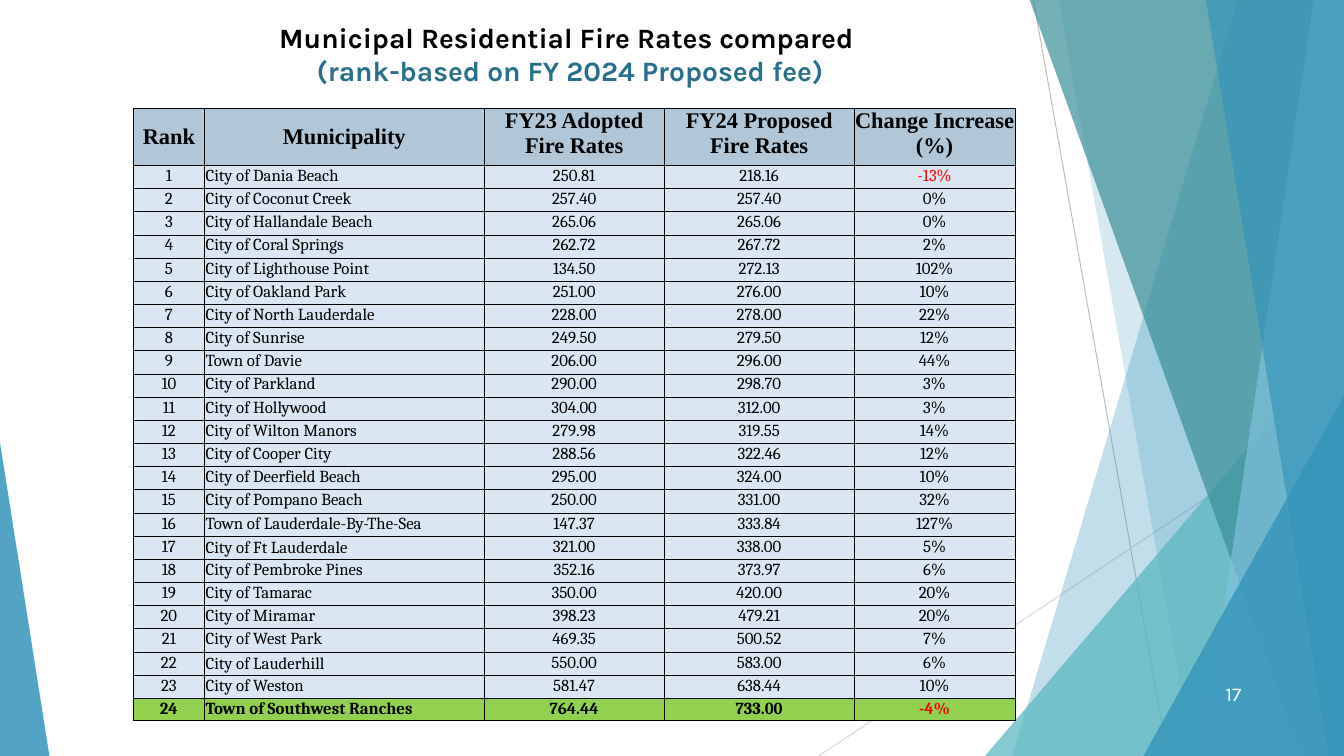
from copy import deepcopy
from dataclasses import dataclass

from lxml.etree import SubElement
from pptx import Presentation
from pptx.dml.color import RGBColor
from pptx.dml.fill import FillFormat
from pptx.enum.shapes import MSO_CONNECTOR, MSO_SHAPE
from pptx.enum.text import MSO_ANCHOR, MSO_AUTO_SIZE, PP_ALIGN
from pptx.oxml import parse_xml
from pptx.oxml.ns import nsdecls, qn
from pptx.shapes.autoshape import Shape
from pptx.slide import Slide
from pptx.table import _Cell
from pptx.text.text import _Paragraph
from pptx.util import Inches, Pt

WIDTH, HEIGHT = 13.33, 7.5
BLACK, WHITE, RED = "000000", "FFFFFF", "FF0000"
BLUE, TEAL = "3494BA", "276F8B"
HEADER_FILL, BODY_FILL, HOME_TOWN_FILL = "B1C6D7", "DAE6F1", "92D050"

TITLE_FONT = {"name": "Karla", "size": Pt(20), "bold": True}
NUMBER_FONT = {"name": "Karla", "size": Pt(14), "bold": False}
HEADER_FONT = {"name": "Times New Roman", "size": Pt(16), "bold": True}
BODY_FONT = {"name": "Cambria", "size": Pt(12), "bold": False}
CELL_MARGINS = {
    "margin_left": Inches(0.01),
    "margin_top": Inches(0.01),
    "margin_right": Inches(0.01),
    "margin_bottom": Inches(0),
}


@dataclass
class Ray:
    start: tuple[float, float]
    end: tuple[float, float]
    color: str


@dataclass
class Facet:
    corners: list[tuple[float, float]]
    color: str
    opacity: int


@dataclass
class Wedge:
    box: tuple[float, float, float, float]
    apex: float
    color: str
    opacity: int


@dataclass
class City:
    name: str
    adopted: str
    proposed: str
    change: str
    anchor: MSO_ANCHOR = MSO_ANCHOR.TOP


RAYS = [
    Ray((10.25, 0), (11.58, HEIGHT), "BFBFBF"),
    Ray((WIDTH, 4.03), (8.12, HEIGHT), "D9D9D9"),
]


def edge_facet(top: float, bottom: float, color: str, opacity: int) -> Facet:
    corners = [(top, -0.01), (WIDTH, -0.01), (WIDTH, HEIGHT), (bottom, HEIGHT)]
    return Facet(corners, color, opacity)


PANES = [
    edge_facet(12.28, 10.04, BLUE, 30),
    edge_facet(10.5, 11.83, BLUE, 20),
    Wedge((9.77, 3.33, 3.56, 4.17), 1, "58B6C0", 72),
    edge_facet(10.21, 12.91, "3A8F98", 70),
    edge_facet(13.03, 11.92, "7FC1DB", 70),
    edge_facet(11.96, 13.18, BLUE, 65),
    Wedge((11.34, 3.93, 1.99, 3.57), 1, BLUE, 80),
    Wedge((0, 4.39, 0.49, 3.11), 0, BLUE, 85),
]

COLUMN_WIDTHS = [0.71, 2.77, 1.79, 1.88, 1.6]
ROW_HEIGHT = 0.23
HEADINGS = [
    ("Rank", MSO_ANCHOR.MIDDLE),
    ("Municipality", MSO_ANCHOR.MIDDLE),
    ("FY23 Adopted\nFire Rates", MSO_ANCHOR.TOP),
    ("FY24 Proposed\nFire Rates", MSO_ANCHOR.TOP),
    ("Change Increase (%)", MSO_ANCHOR.TOP),
]
CITIES = [
    City("City of Dania Beach", "250.81", "218.16", "-13%"),
    City("City of Coconut Creek", "257.40", "257.40", "0%"),
    City("City of Hallandale Beach", "265.06", "265.06", "0%"),
    City("City of Coral Springs", "262.72", "267.72", "2%"),
    City("City of Lighthouse Point", "134.50", "272.13", "102%"),
    City("City of Oakland Park", "251.00", "276.00", "10%"),
    City("City of North Lauderdale", "228.00", "278.00", "22%"),
    City("City of Sunrise", "249.50", "279.50", "12%"),
    City("Town of Davie", "206.00", "296.00", "44%"),
    City("City of Parkland", "290.00", "298.70", "3%"),
    City("City of Hollywood", "304.00", "312.00", "3%"),
    City("City of Wilton Manors", "279.98", "319.55", "14%"),
    City("City of Cooper City", "288.56", "322.46", "12%"),
    City("City of Deerfield Beach", "295.00", "324.00", "10%"),
    City("City of Pompano Beach", "250.00", "331.00", "32%"),
    City("Town of Lauderdale-By-The-Sea", "147.37", "333.84", "127%"),
    City("City of Ft Lauderdale", "321.00", "338.00", "5%", MSO_ANCHOR.MIDDLE),
    City("City of Pembroke Pines", "352.16", "373.97", "6%"),
    City("City of Tamarac", "350.00", "420.00", "20%"),
    City("City of Miramar", "398.23", "479.21", "20%"),
    City("City of West Park", "469.35", "500.52", "7%"),
    City("City of Lauderhill", "550.00", "583.00", "6%", MSO_ANCHOR.MIDDLE),
    City("City of Weston", "581.47", "638.44", "10%"),
    City("Town of Southwest Ranches", "764.44", "733.00", "-4%"),
]


def set_format(target: object, values: dict) -> None:
    for attribute, value in values.items():
        setattr(target, attribute, value)


def paint(fill: FillFormat, color: str) -> None:
    fill.solid()
    fill.fore_color.rgb = RGBColor.from_string(color)


def write(paragraph: _Paragraph, text: str, font: dict, color: str, align: PP_ALIGN) -> None:
    paragraph.text = text
    paragraph.alignment = align
    for run in paragraph.runs:
        set_format(run.font, font)
        paint(run.font.fill, color)
    for line_break in paragraph._p.findall(qn("a:br")):
        line_break.append(deepcopy(paragraph.runs[0]._r.rPr))


def draw_ray(slide: Slide, ray: Ray) -> None:
    ends = [Inches(value) for value in (*ray.start, *ray.end)]
    connector = slide.shapes.add_connector(MSO_CONNECTOR.STRAIGHT, *ends)
    paint(connector.line.fill, ray.color)
    connector.line.width = Pt(0.75)
    SubElement(connector._element.spPr, qn("a:effectLst"))


def pane_shape(slide: Slide, pane: Facet | Wedge) -> Shape:
    if isinstance(pane, Wedge):
        box = [Inches(value) for value in pane.box]
        wedge = slide.shapes.add_shape(MSO_SHAPE.ISOSCELES_TRIANGLE, *box)
        wedge.adjustments[0] = pane.apex
        return wedge
    corners = [(Inches(x), Inches(y)) for x, y in pane.corners]
    outline = slide.shapes.build_freeform(*corners[0])
    outline.add_line_segments(corners[1:], close=True)
    return outline.convert_to_shape()


def draw_pane(slide: Slide, pane: Facet | Wedge) -> None:
    shape = pane_shape(slide, pane)
    shape.shadow.inherit = False
    shape.line.fill.background()
    paint(shape.fill, pane.color)
    color = shape._element.spPr.find(qn("a:solidFill"))[0]
    SubElement(color, qn("a:alpha"), val=str(pane.opacity * 1000))


def fill_cell(cell: _Cell, text: str, font: dict, color: str, fill: str,
              align: PP_ALIGN, anchor: MSO_ANCHOR) -> None:
    set_format(cell, {**CELL_MARGINS, "vertical_anchor": anchor})
    write(cell.text_frame.paragraphs[0], text, font, color, align)
    paint(cell.fill, fill)
    for position, side in enumerate("LRTB"):
        border = parse_xml(
            f'<a:ln{side} {nsdecls("a")} w="{Pt(0.5)}"><a:solidFill>'
            f'<a:srgbClr val="{BLACK}"/></a:solidFill></a:ln{side}>'
        )
        cell._tc.get_or_add_tcPr().insert(position, border)


def draw_title(slide: Slide) -> None:
    title = slide.shapes.title
    set_format(title, {"left": Inches(1.66), "top": Inches(0.15),
                       "width": Inches(7.99), "height": Inches(0.77)})
    frame = title.text_frame
    set_format(frame, {"word_wrap": True, "vertical_anchor": MSO_ANCHOR.TOP,
                       "auto_size": MSO_AUTO_SIZE.SHAPE_TO_FIT_TEXT})
    write(frame.paragraphs[0], "Municipal Residential Fire Rates compared ",
          TITLE_FONT, BLACK, PP_ALIGN.CENTER)
    write(frame.add_paragraph(), "(rank-based on FY 2024 Proposed fee)",
          TITLE_FONT, TEAL, PP_ALIGN.CENTER)


def draw_page_number(slide: Slide) -> None:
    number = slide.shapes.add_textbox(Inches(11.66), Inches(6.68), Inches(0.75), Inches(0.4))
    set_format(number.text_frame, {"word_wrap": True, "vertical_anchor": MSO_ANCHOR.MIDDLE})
    write(number.text_frame.paragraphs[0], "17", NUMBER_FONT, WHITE, PP_ALIGN.RIGHT)


def draw_rates(slide: Slide) -> None:
    rates = slide.shapes.add_table(
        len(CITIES) + 1, len(HEADINGS), Inches(1.32), Inches(1.07), Inches(8.74), Inches(6.08)
    ).table
    set_format(rates, {"first_row": False, "horz_banding": False})
    for column, width in zip(rates.columns, COLUMN_WIDTHS):
        column.width = Inches(width)
    for row in rates.rows:
        row.height = Inches(ROW_HEIGHT)
    rates.rows[0].height = Inches(0.57)
    rates.rows[len(CITIES)].height = Inches(0.22)

    for column, (heading, anchor) in enumerate(HEADINGS):
        fill_cell(rates.cell(0, column), heading, HEADER_FONT, BLACK, HEADER_FILL,
                  PP_ALIGN.CENTER, anchor)
    for rank, city in enumerate(CITIES, 1):
        home_town = rank == len(CITIES)
        font = {**BODY_FONT, "bold": home_town}
        fill = HOME_TOWN_FILL if home_town else BODY_FILL
        values = [str(rank), city.name, city.adopted, city.proposed, city.change]
        for column, value in enumerate(values):
            is_name = column == 1
            fill_cell(rates.cell(rank, column), value, font,
                      RED if value.startswith("-") else BLACK, fill,
                      PP_ALIGN.LEFT if is_name else PP_ALIGN.CENTER,
                      city.anchor if is_name else MSO_ANCHOR.TOP)


def main() -> None:
    deck = Presentation()
    set_format(deck, {"slide_width": Inches(WIDTH), "slide_height": Inches(HEIGHT)})
    slide = deck.slides.add_slide(deck.slide_layouts[5])
    for ray in RAYS:
        draw_ray(slide, ray)
    for pane in PANES:
        draw_pane(slide, pane)
    draw_title(slide)
    draw_page_number(slide)
    draw_rates(slide)
    deck.save("out.pptx")


if __name__ == "__main__":
    main()
